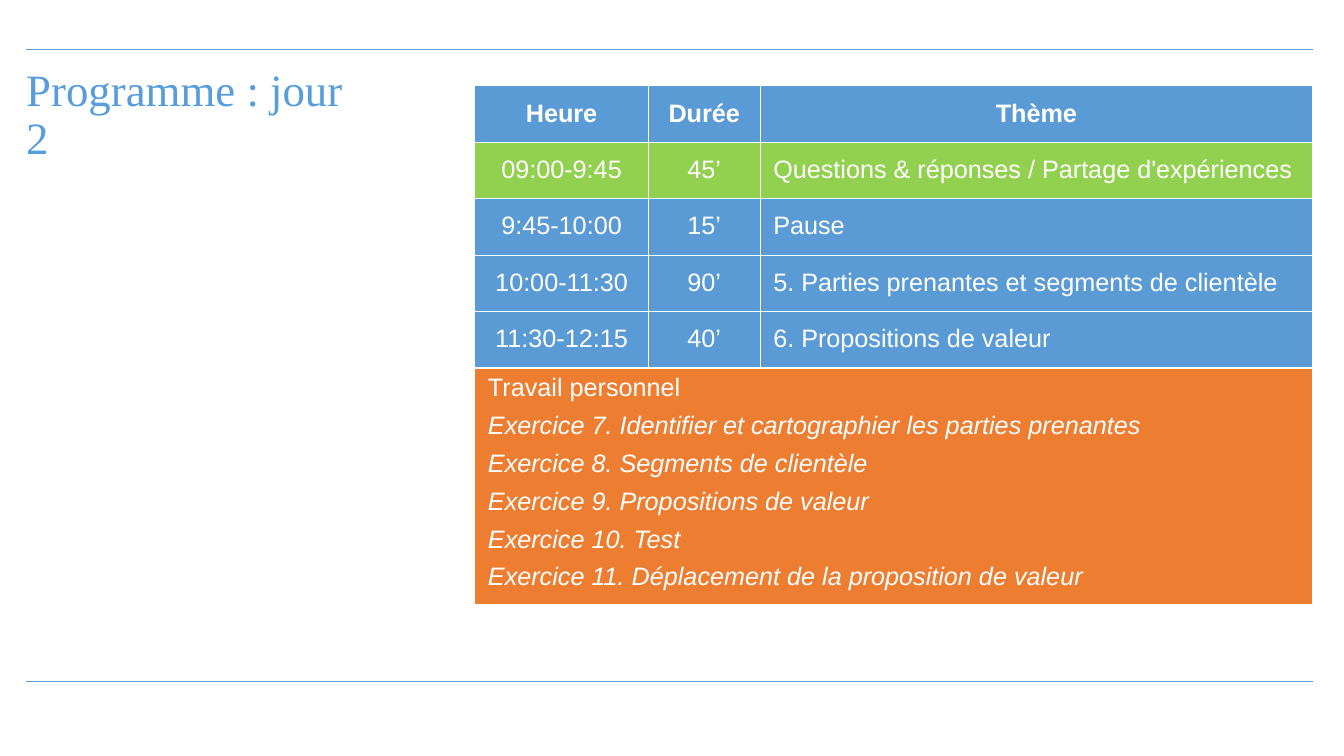
from dataclasses import dataclass

from lxml import etree
from pptx import Presentation
from pptx.dml.color import RGBColor
from pptx.enum import shapes, text
from pptx.oxml import ns
from pptx.util import Inches, Pt

WHITE, BLUE, GREEN, ORANGE = "FFFFFF", "5B9BD5", "92D050", "ED7D31"
ACCENT = "579DDB"
LEFT, RIGHT = 0.26, 13.02
COLUMN_WIDTHS = (1.72, 1.11, 5.48)
ROW_HEIGHT, HOMEWORK_HEIGHT = 0.54, 2.33


@dataclass
class Session:
    hours: str
    duration: str
    theme: str
    fill: str = BLUE
    header: bool = False


SESSIONS = [
    Session("Heure", "Durée", "Thème", header=True),
    Session("09:00-9:45", "45’", "Questions & réponses / Partage d'expériences", GREEN),
    Session("9:45-10:00", "15’", "Pause"),
    Session("10:00-11:30", "90’", "5. Parties prenantes et segments de clientèle"),
    Session("11:30-12:15", "40’", "6. Propositions de valeur"),
]
HOMEWORK = [
    "Travail personnel",
    "Exercice 7. Identifier et cartographier les parties prenantes",
    "Exercice 8. Segments de clientèle",
    "Exercice 9. Propositions de valeur",
    "Exercice 10. Test",
    "Exercice 11. Déplacement de la proposition de valeur",
]


def rgb(value: str) -> RGBColor:
    return RGBColor.from_string(value)


def add_run(p, words: str, font: str, size: float, color: str,
            bold: bool = False, italic: bool = False) -> None:
    r = p.add_run()
    r.text = words
    r.font.name = font
    r.font.size = Pt(size)
    r.font.color.rgb = rgb(color)
    r.font.bold = bold
    r.font.italic = italic


def add_rule(s, y: float) -> None:
    line = s.shapes.add_connector(shapes.MSO_CONNECTOR.STRAIGHT,
                                  Inches(LEFT), Inches(y), Inches(RIGHT), Inches(y))
    line.line.color.rgb = rgb(ACCENT)
    line.line.width = Pt(1)
    etree.SubElement(line._element.spPr, ns.qn("a:effectLst"))


def add_title(s) -> None:
    sp = s.shapes.add_textbox(Inches(LEFT), Inches(0.67), Inches(3.42), Inches(0.87))
    tf = sp.text_frame
    tf.word_wrap = True
    tf.margin_left = tf.margin_right = tf.margin_top = tf.margin_bottom = 0
    p = tf.paragraphs[0]
    p.line_spacing = 0.9
    add_run(p, "Programme : jour 2", "Times New Roman", 32, ACCENT)


def style_cell(cell, fill: str) -> None:
    cell.margin_left = cell.margin_right = Inches(0.13)
    cell.margin_top = cell.margin_bottom = Inches(0.13)
    tc_pr = cell._tc.get_or_add_tcPr()
    for side in ("a:lnL", "a:lnR", "a:lnT", "a:lnB"):
        border = etree.SubElement(tc_pr, ns.qn(side), w=str(Pt(1)))
        solid = etree.SubElement(border, ns.qn("a:solidFill"))
        etree.SubElement(solid, ns.qn("a:srgbClr"), val=WHITE)
    cell.fill.solid()
    cell.fill.fore_color.rgb = rgb(fill)


def fill_session(row, session: Session) -> None:
    for column, words in enumerate((session.hours, session.duration, session.theme)):
        cell = row.cells[column]
        style_cell(cell, session.fill)
        if session.header:
            cell.vertical_anchor = text.MSO_ANCHOR.MIDDLE
        p = cell.text_frame.paragraphs[0]
        centred = session.header or column < 2
        p.alignment = text.PP_ALIGN.CENTER if centred else text.PP_ALIGN.JUSTIFY
        add_run(p, words, "Arial", 18, WHITE, bold=session.header)


def fill_homework(row) -> None:
    for cell in row.cells:
        style_cell(cell, ORANGE)
    first = row.cells[0]
    first.merge(row.cells[len(COLUMN_WIDTHS) - 1])
    tf = first.text_frame
    for i, words in enumerate(HOMEWORK):
        p = tf.add_paragraph() if i else tf.paragraphs[0]
        p.alignment = text.PP_ALIGN.JUSTIFY
        p.line_spacing = Pt(15)
        p.space_before = Pt(6 if i else 0)
        p.space_after = Pt(6)
        add_run(p, words, "Arial", 18, WHITE, italic=i > 0)


def add_programme(s) -> None:
    height = ROW_HEIGHT * len(SESSIONS) + HOMEWORK_HEIGHT
    frame = s.shapes.add_table(len(SESSIONS) + 1, len(COLUMN_WIDTHS), Inches(4.71),
                               Inches(0.85), Inches(sum(COLUMN_WIDTHS)), Inches(height))
    table = frame.table
    table.first_row = table.horz_banding = False
    for column, width in zip(table.columns, COLUMN_WIDTHS):
        column.width = Inches(width)
    for row, session in zip(table.rows, SESSIONS):
        row.height = Inches(ROW_HEIGHT)
        fill_session(row, session)
    homework_row = table.rows[len(SESSIONS)]
    homework_row.height = Inches(HOMEWORK_HEIGHT)
    fill_homework(homework_row)


def main() -> None:
    prs = Presentation()
    prs.slide_width, prs.slide_height = Inches(13.33), Inches(7.5)
    s = prs.slides.add_slide(prs.slide_layouts[6])
    for y in (6.76, 0.49):
        add_rule(s, y)
    add_title(s)
    add_programme(s)
    prs.save("out.pptx")


if __name__ == "__main__":
    main()
